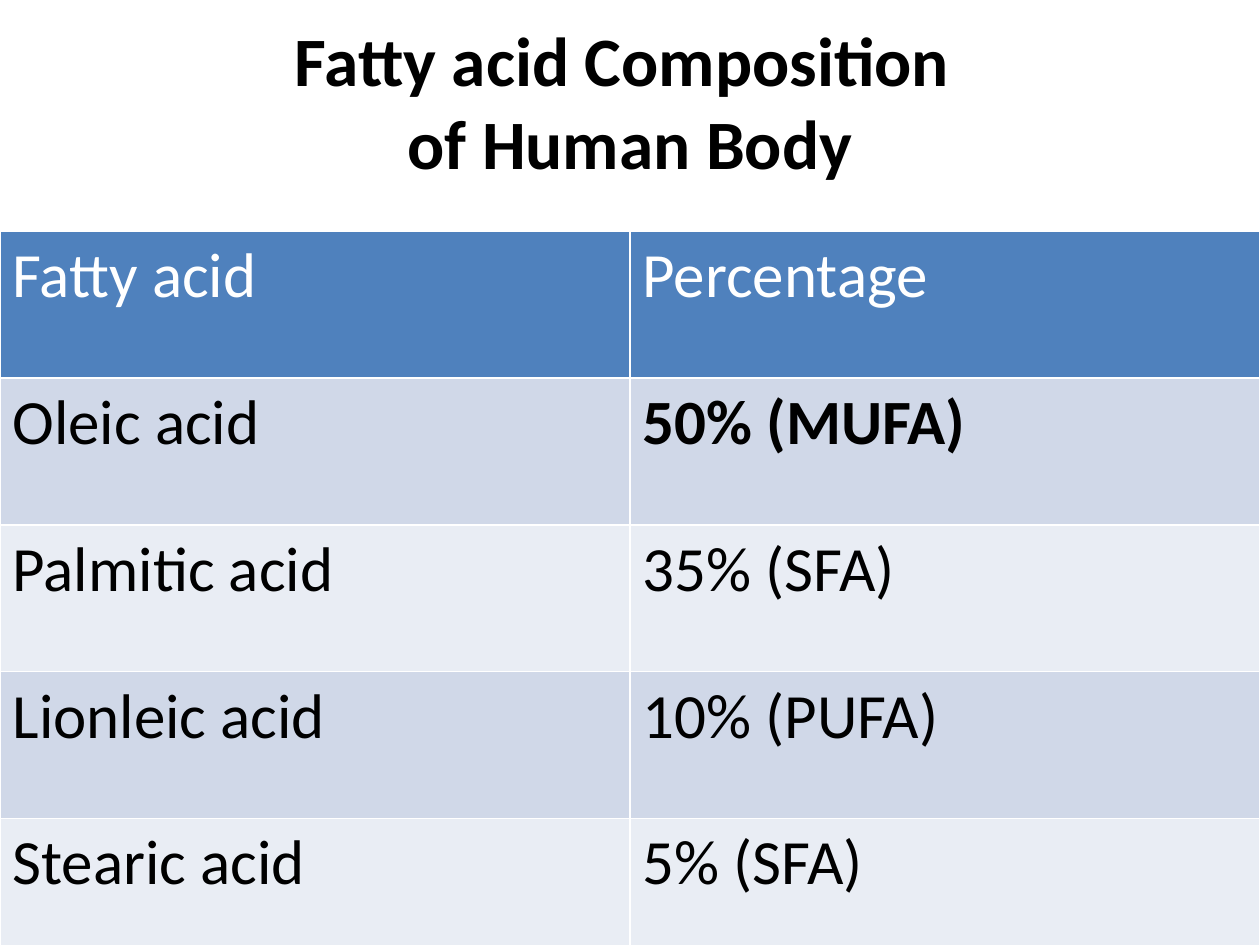
from dataclasses import dataclass

from lxml import etree
from pptx import Presentation
from pptx.dml.color import RGBColor
from pptx.enum.text import MSO_ANCHOR, PP_ALIGN
from pptx.oxml.ns import qn
from pptx.util import Cm, Pt

MIDDLE = MSO_ANCHOR.MIDDLE
CENTER = PP_ALIGN.CENTER
LEFT = PP_ALIGN.LEFT


@dataclass(frozen=True)
class Theme:
    font: str = "Calibri"
    title_size: float = 39.6
    body_size: float = 36
    text: str = "000000"
    header_text: str = "FFFFFF"
    header_fill: str = "4F81BD"
    bands: tuple = ("D0D8E8", "E9EDF4")
    border: str = "FFFFFF"
    border_width: float = 1


class SlideBuilder:
    """Adds styled elements to the current slide."""

    def __init__(self, s, theme):
        self.s = s
        self.theme = theme

    def set_text(self, tf, text, size, color, bold=False, align=LEFT):
        p = tf.paragraphs[0]
        p.text = text
        p.alignment = align
        style = {"name": self.theme.font, "size": Pt(size), "bold": bold}
        for r in p.runs:
            for key, value in style.items():
                setattr(r.font, key, value)
            r.font.color.rgb = RGBColor.from_string(color)

    def title(self, text, left, top, width, height):
        sp = self.s.shapes.add_textbox(Cm(left), Cm(top), Cm(width), Cm(height))
        tf = sp.text_frame
        tf.word_wrap = True
        tf.vertical_anchor = MIDDLE
        self.set_text(tf, text, self.theme.title_size, self.theme.text, True, CENTER)

    def borders(self, cell):
        tc_pr = cell._tc.get_or_add_tcPr()
        for side in ("lnL", "lnR", "lnT", "lnB"):
            ln = etree.SubElement(tc_pr, qn(f"a:{side}"), w=str(Pt(self.theme.border_width)))
            fill = etree.SubElement(ln, qn("a:solidFill"))
            etree.SubElement(fill, qn("a:srgbClr"), val=self.theme.border)

    def table(self, rows, bold_cells, left, top, width, row_height):
        t = self.theme
        table = self.s.shapes.add_table(
            len(rows), len(rows[0]), Cm(left), Cm(top), Cm(width), Cm(row_height * len(rows))
        ).table
        table.first_row = table.horz_banding = False
        for i, row in enumerate(rows):
            table.rows[i].height = Cm(row_height)
            fill = t.bands[(i - 1) % 2] if i else t.header_fill
            color = t.text if i else t.header_text
            for j, text in enumerate(row):
                cell = table.cell(i, j)
                self.borders(cell)
                cell.fill.solid()
                cell.fill.fore_color.rgb = RGBColor.from_string(fill)
                self.set_text(cell.text_frame, text, t.body_size, color, (i, j) in bold_cells)


def main():
    prs = Presentation()
    prs.slide_width, prs.slide_height = Cm(25.4), Cm(19.05)
    s = prs.slides.add_slide(prs.slide_layouts[6])
    builder = SlideBuilder(s, Theme())
    builder.title("Fatty acid Composition \vof Human Body", 1.27, 0.43, 22.86, 3.18)
    acids = [
        ("Fatty acid", "Percentage"),
        ("Oleic acid", "50% (MUFA)"),
        ("Palmitic acid", "35% (SFA)"),
        ("Lionleic acid", "10% (PUFA)"),
        ("Stearic acid", "5% (SFA)"),
    ]
    builder.table(acids, {(1, 1)}, 0, 4.66, 25.4, 2.96)
    prs.save("out.pptx")


if __name__ == "__main__":
    main()
